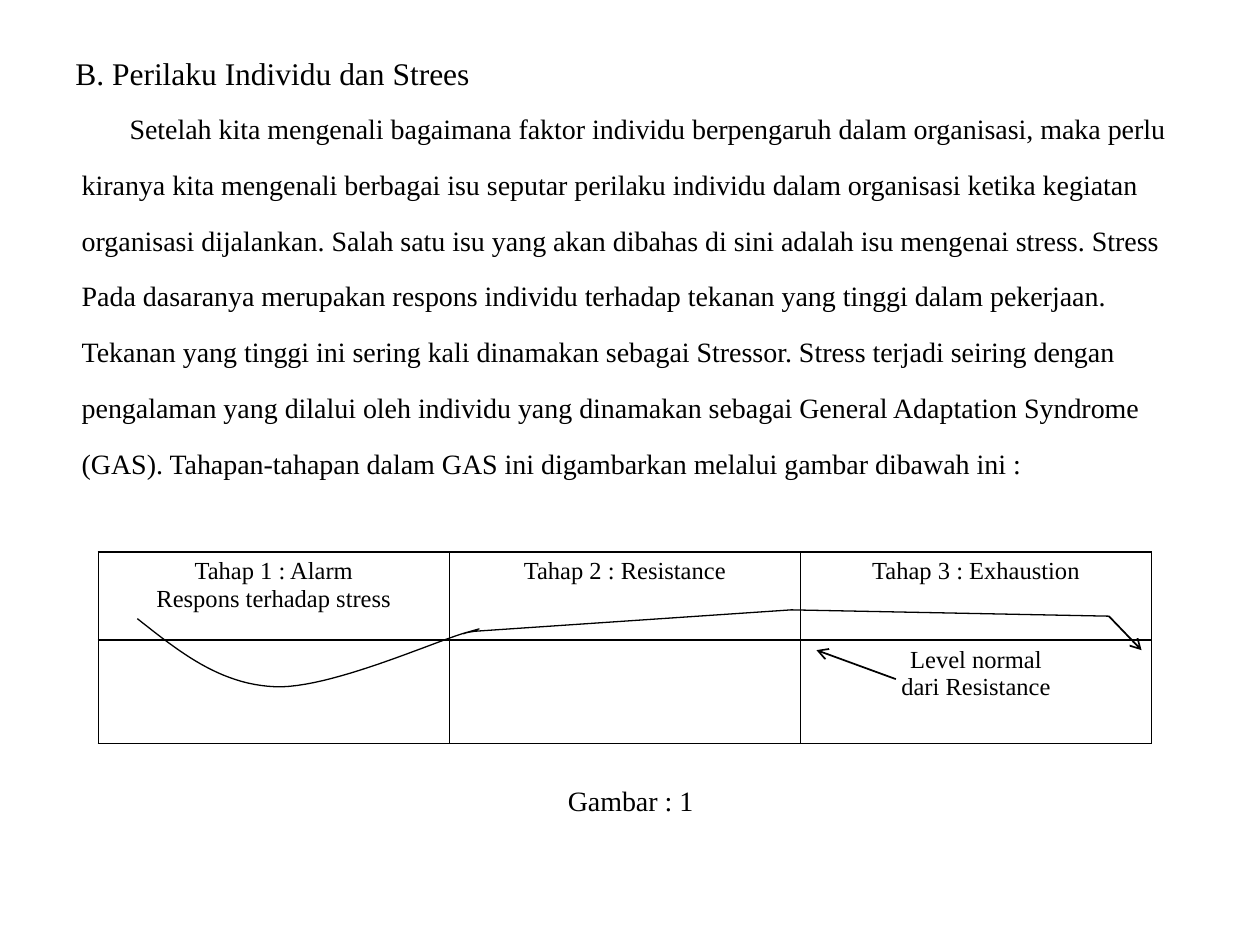
from lxml.etree import SubElement as Sub
from pptx import Presentation
from pptx.dml.color import RGBColor
from pptx.enum.shapes import MSO_CONNECTOR as Link
from pptx.enum.text import MSO_ANCHOR as Anchor, PP_ALIGN as Align
from pptx.oxml.ns import qn
from pptx.util import Inches, Pt

BLACK = RGBColor(0, 0, 0)
FONT = "Times New Roman"

TITLE = "B. Perilaku Individu dan Strees"
BODY = [
    "Setelah kita mengenali bagaimana faktor individu berpengaruh dalam organisasi, maka perlu",
    "kiranya kita mengenali berbagai isu seputar perilaku individu dalam organisasi ketika kegiatan",
    "organisasi dijalankan. Salah satu isu yang akan dibahas di sini adalah isu mengenai stress. Stress",
    "Pada dasaranya merupakan respons individu terhadap tekanan yang tinggi dalam pekerjaan.",
    "Tekanan yang tinggi ini sering kali dinamakan sebagai Stressor. Stress terjadi seiring dengan",
    "pengalaman yang dilalui oleh individu yang dinamakan sebagai General Adaptation Syndrome",
    "(GAS). Tahapan-tahapan dalam GAS ini digambarkan melalui gambar dibawah ini :",
]
CAPTION = "Gambar : 1"
STAGES = [
    [["Tahap 1 : Alarm", "Respons terhadap stress"],
     ["Tahap 2 : Resistance"],
     ["Tahap 3 : Exhaustion"]],
    [[], [], ["Level normal", "dari Resistance"]],
]
ROWS = [0.7, 0.82]
START = (1.09, 4.91)
BENDS = [
    [(1.42, 5.17), (1.74, 5.43), (2.18, 5.45)],
    [(2.61, 5.47), (3.45, 5.09), (3.7, 5.02)],
    [(3.95, 4.95), (3.66, 5.03), (3.68, 5.03)],
    [(3.69, 5.02), (3.77, 5.01), (3.77, 5.01)],
]
TAIL = [(6.28, 4.84), (8.8, 4.89)]
ARROWS = [((8.8, 4.89), (9.06, 5.16)), ((7.11, 5.39), (6.48, 5.16))]
STEPS = 24


def write(frame, lines, size, align):
    for i, line in enumerate(lines):
        para = frame.paragraphs[0] if i == 0 else frame.add_paragraph()
        para.alignment = align
        run = para.add_run()
        run.text = line
        font = run.font
        font.name, font.size, font.bold = FONT, Pt(size), False
        font.color.rgb = BLACK


def add_text(slide, box, lines, size, align, anchor=Anchor.TOP):
    frame = slide.shapes.add_textbox(*map(Inches, box)).text_frame
    frame.word_wrap = True
    frame.vertical_anchor = anchor
    write(frame, lines, size, align)
    return frame


def add_edges(cell):
    props = cell._tc.get_or_add_tcPr()
    for i, side in enumerate(("lnL", "lnR", "lnT", "lnB")):
        line = props.makeelement(qn("a:" + side), {"w": str(Pt(1))})
        fill = Sub(line, qn("a:solidFill"))
        Sub(fill, qn("a:srgbClr"), val=str(BLACK))
        props.insert(i, line)


def add_stages(slide):
    box = map(Inches, (0.78, 4.38, 8.36, sum(ROWS)))
    table = slide.shapes.add_table(len(ROWS), 3, *box).table
    table.first_row = table.horz_banding = False
    for row, high in zip(table.rows, ROWS):
        row.height = Inches(high)
    for r, row in enumerate(STAGES):
        for c, lines in enumerate(row):
            cell = table.cell(r, c)
            cell.fill.background()
            write(cell.text_frame, lines, 14, Align.CENTER)
            add_edges(cell)


def bend(a, b, c, d):
    for i in range(1, STEPS + 1):
        t = i / STEPS
        s = 1 - t
        yield tuple(s**3 * p + 3 * s * s * t * q + 3 * s * t * t * u + t**3 * v
                    for p, q, u, v in zip(a, b, c, d))


def add_curve(slide):
    dots = [START]
    for knots in BENDS:
        dots += bend(dots[-1], *knots)
    dots += TAIL
    spots = [(Inches(x), Inches(y)) for x, y in dots]
    build = slide.shapes.build_freeform(*spots[0])
    build.add_line_segments(spots[1:], close=False)
    curve = build.convert_to_shape()
    curve.shadow.inherit = False
    curve.fill.background()
    curve.line.color.rgb = BLACK
    curve.line.width = Pt(0.75)


def add_arrow(slide, start, end):
    link = slide.shapes.add_connector(Link.STRAIGHT, *map(Inches, start + end))
    link.line.color.rgb = BLACK
    link.line.width = Pt(1)
    Sub(link.line._get_or_add_ln(), qn("a:tailEnd"), type="arrow")
    Sub(link._element.spPr, qn("a:effectLst"))


def main():
    deck = Presentation()
    deck.slide_width, deck.slide_height = Inches(10), Inches(7.5)
    slide = deck.slides.add_slide(deck.slide_layouts[6])
    add_text(slide, (0.5, 0.3, 9, 0.56), [TITLE], 18, Align.LEFT, Anchor.MIDDLE)
    body = add_text(slide, (0.55, 0.7, 8.91, 3.4), BODY, 16, Align.JUSTIFY)
    for para in body.paragraphs:
        para.line_spacing = 1.5
        para.space_before = Pt(3.2)
    body.paragraphs[0]._p.get_or_add_pPr().set("indent", str(Inches(0.38)))
    add_stages(slide)
    add_curve(slide)
    for start, end in ARROWS:
        add_arrow(slide, start, end)
    add_text(slide, (0.55, 6.17, 8.91, 0.36), [CAPTION], 16, Align.CENTER)
    deck.save("out.pptx")


if __name__ == "__main__":
    main()
